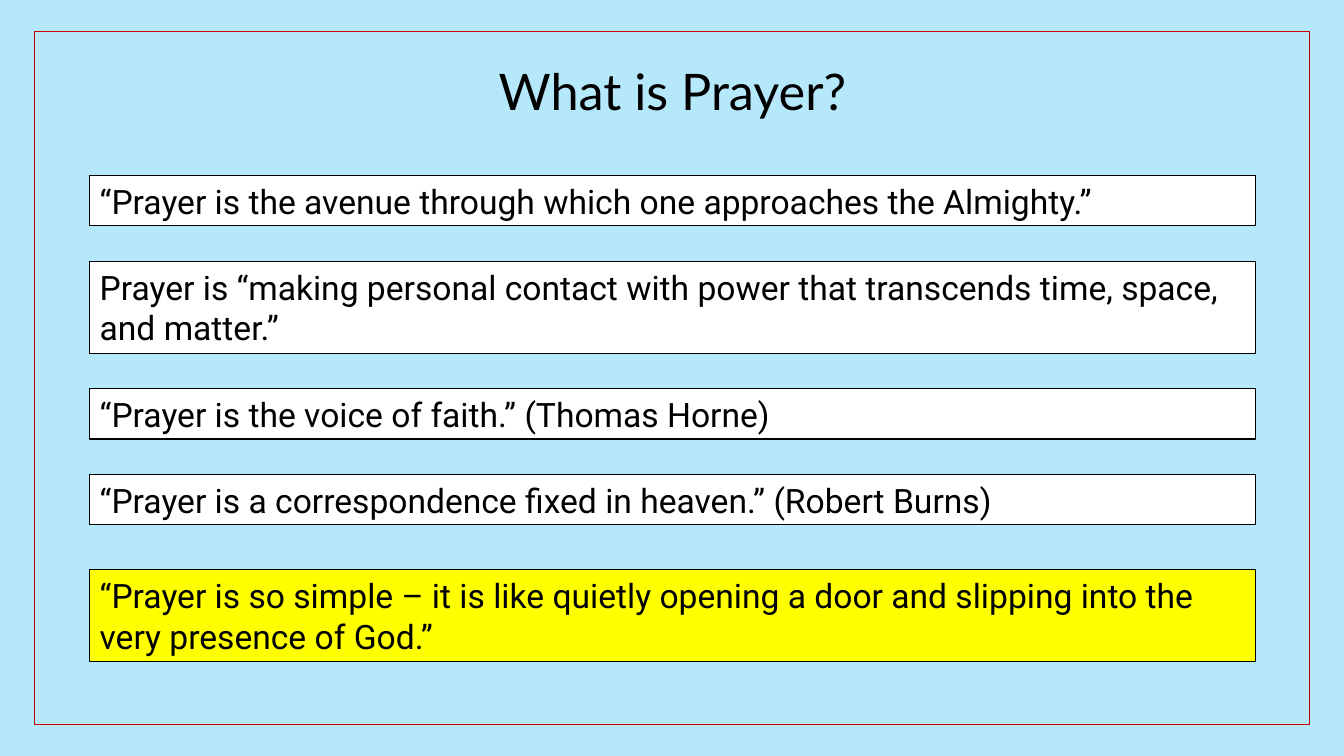
import pptx
import pptx.dml.color
import pptx.enum.shapes
import pptx.enum.text
import pptx.util

WIDTH, HEIGHT = pptx.util.Inches(13.33), pptx.util.Inches(7.5)

# Boxes are left, top, width, height in percent of the slide
FRAME = (2.55, 4.13, 94.9, 91.73)
TITLE = (8.78, 7.2, 82.5, 9.47)
QUOTES = (6.68, 23.2, 86.72, 64.27)
ONE_LINE, EXTRA_LINE = 6.67, 5.46
GAP, CLOSING_GAP = 4.7, 5.9

# Text, number of lines
DEFINITIONS = [
    ("“Prayer is the avenue through which one approaches the Almighty.”", 1),
    ("Prayer is “making personal contact with power that transcends time, "
     "space, and matter.”", 2),
    ("“Prayer is the voice of faith.” (Thomas Horne)", 1),
    ("“Prayer is a correspondence fixed in heaven.” (Robert Burns)", 1),
]
CLOSING = ("“Prayer is so simple – it is like quietly opening a door and "
           "slipping into the very presence of God.”", 2)


def color(hex_value):
    return pptx.dml.color.RGBColor.from_string(hex_value)


def place(box):
    """Turn a box in percent of the slide into lengths."""
    left, top, width, height = box
    return (int(WIDTH * left / 100), int(HEIGHT * top / 100),
            int(WIDTH * width / 100), int(HEIGHT * height / 100))


def add_box(slide, box, fill, line, weight):
    """Add a rectangle; it stays hollow when fill is None."""
    sp = slide.shapes.add_shape(
        pptx.enum.shapes.MSO_SHAPE.RECTANGLE, *place(box))
    sp.shadow.inherit = False
    if fill:
        sp.fill.solid()
        sp.fill.fore_color.rgb = color(fill)
    else:
        sp.fill.background()
    sp.line.color.rgb = color(line)
    sp.line.width = pptx.util.Pt(weight)
    return sp


def write(sp, text, font, size, align):
    tf = sp.text_frame
    tf.word_wrap = True
    tf.auto_size = pptx.enum.text.MSO_AUTO_SIZE.SHAPE_TO_FIT_TEXT
    tf.text = text
    p = tf.paragraphs[0]
    p.alignment = align
    p.font.name = font
    p.font.size = pptx.util.Pt(size)
    p.font.color.rgb = color("000000")


def add_title(slide, box):
    title = slide.shapes.title
    title.left, title.top, title.width, title.height = place(box)
    write(title, "What is Prayer?", "Lato", 36,
          pptx.enum.text.PP_ALIGN.CENTER)


def add_quotes(slide, box):
    """Stack the definitions downwards and set the closing one apart."""
    left, top, width, _ = box
    for quote in DEFINITIONS + [CLOSING]:
        text, lines = quote
        fill = "FFFFFF"
        if quote is CLOSING:
            fill = "FFFF00"
            top += CLOSING_GAP - GAP
        height = ONE_LINE + (lines - 1) * EXTRA_LINE
        sp = add_box(slide, (left, top, width, height), fill, "000000", 0.75)
        write(sp, text, "Roboto", 24, pptx.enum.text.PP_ALIGN.LEFT)
        top += height + GAP


def main():
    prs = pptx.Presentation()
    prs.slide_width, prs.slide_height = WIDTH, HEIGHT
    slide = prs.slides.add_slide(prs.slide_layouts.get_by_name("Title Only"))
    slide.background.fill.solid()
    slide.background.fill.fore_color.rgb = color("B5E8FB")
    add_box(slide, FRAME, None, "C00000", 1)
    add_title(slide, TITLE)
    add_quotes(slide, QUOTES)
    prs.save("out.pptx")


if __name__ == "__main__":
    main()
